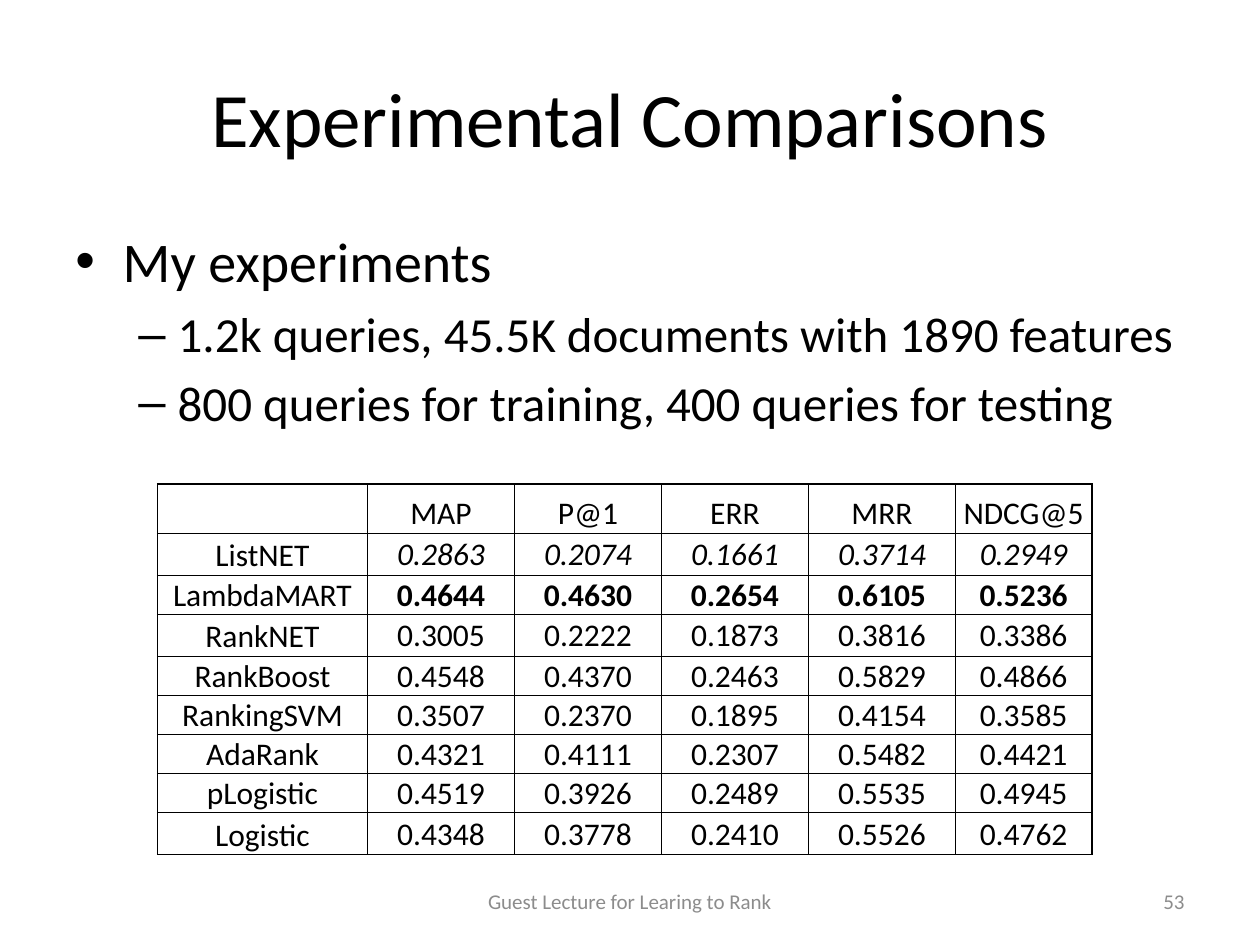
"""Build a slide that compares ranking methods in a table."""
from lxml import etree
from pptx import Presentation
from pptx.dml.color import RGBColor
from pptx.enum.text import MSO_ANCHOR, PP_ALIGN
from pptx.oxml.ns import qn
from pptx.util import Inches, Pt

LEFT, MID, RIGHT = PP_ALIGN.LEFT, PP_ALIGN.CENTER, PP_ALIGN.RIGHT
TOP, CENTER, BOTTOM = MSO_ANCHOR.TOP, MSO_ANCHOR.MIDDLE, MSO_ANCHOR.BOTTOM
BLACK, GREY = "000000", "8C8C8C"

deck = Presentation()
deck.slide_width, deck.slide_height = Inches(10), Inches(7.5)
unit = deck.slide_width / 120
slide = deck.slides.add_slide(deck.slide_layouts[6])


def write(para, text, size, color=BLACK, align=LEFT):
    para.alignment = align
    run = para.add_run()
    run.text = text
    run.font.name, run.font.size = "Calibri", Pt(size)
    run.font.color.rgb = RGBColor.from_string(color)
    return run


def frame(left, top, wide, high, anchor):
    place = [round(n * unit) for n in (left, top, wide, high)]
    body = slide.shapes.add_textbox(*place).text_frame
    body.word_wrap = True
    body.vertical_anchor = anchor
    return body


title = frame(6, 3.6, 108, 15, CENTER)
write(title.paragraphs[0], "Experimental Comparisons", 44, align=MID)

points = [
    (0, "My experiments"),
    (1, "1.2k queries, 45.5K documents with 1890 features"),
    (1, "800 queries for training, 400 queries for testing"),
]
styles = [("•", 32, 4.5, 4.5), ("–", 28, 9.75, 3.75)]
body = frame(6, 21, 108, 59.4, TOP)
for num, (level, text) in enumerate(points):
    mark, size, left, hang = styles[level]
    para = body.add_paragraph() if num else body.paragraphs[0]
    para.level = level
    para.space_before = Pt(size * 0.2)
    write(para, text, size)
    props = para._p.get_or_add_pPr()
    props.set("marL", str(round(left * unit)))
    props.set("indent", str(round(-hang * unit)))
    etree.SubElement(props, qn("a:buFont")).set("typeface", "Arial")
    etree.SubElement(props, qn("a:buChar")).set("char", mark)

data = [
    ["", "MAP", "P@1", "ERR", "MRR", "NDCG@5"],
    ["ListNET", "0.2863", "0.2074", "0.1661", "0.3714", "0.2949"],
    ["LambdaMART", "0.4644", "0.4630", "0.2654", "0.6105", "0.5236"],
    ["RankNET", "0.3005", "0.2222", "0.1873", "0.3816", "0.3386"],
    ["RankBoost", "0.4548", "0.4370", "0.2463", "0.5829", "0.4866"],
    ["RankingSVM", "0.3507", "0.2370", "0.1895", "0.4154", "0.3585"],
    ["AdaRank", "0.4321", "0.4111", "0.2307", "0.5482", "0.4421"],
    ["pLogistic", "0.4519", "0.3926", "0.2489", "0.5535", "0.4945"],
    ["Logistic", "0.4348", "0.3778", "0.2410", "0.5526", "0.4762"],
]
cols = [20, 14, 14, 14, 14, 13]
rows = [4.7, 4, 3.7, 4, 3.7, 3.7, 3.7, 3.7, 4]
place = [round(n * unit) for n in (15, 46.1, sum(cols), sum(rows))]
table = slide.shapes.add_table(len(rows), len(cols), *place).table
table.first_row = table.horz_banding = False
for col, wide in zip(table.columns, cols):
    col.width = round(wide * unit)
for row, high in zip(table.rows, rows):
    row.height = round(high * unit)

for r, line in enumerate(data):
    for c, text in enumerate(line):
        cell = table.cell(r, c)
        cell.margin_left = cell.margin_right = cell.margin_top = Inches(0.01)
        cell.margin_bottom = 0
        score = r > 0 and c > 0
        cell.vertical_anchor = CENTER if score else BOTTOM
        if text:
            run = write(cell.text_frame.paragraphs[0], text, 18, align=MID)
            run.font.italic = score and r == 1
            run.font.bold = score and r == 2
        props = cell._tc.get_or_add_tcPr()
        for side in ("lnL", "lnR", "lnT", "lnB"):
            edge = etree.SubElement(props, qn("a:" + side), w=str(Pt(1)))
            fill = etree.SubElement(edge, qn("a:solidFill"))
            etree.SubElement(fill, qn("a:srgbClr"), val=BLACK)
        cell.fill.background()

foot = frame(41, 83.4, 38, 4.8, CENTER)
write(foot.paragraphs[0], "Guest Lecture for Learing to Rank", 12, GREY, MID)
page = frame(86, 83.4, 28, 4.8, CENTER)
write(page.paragraphs[0], "53", 12, GREY, RIGHT)

deck.save("out.pptx")
